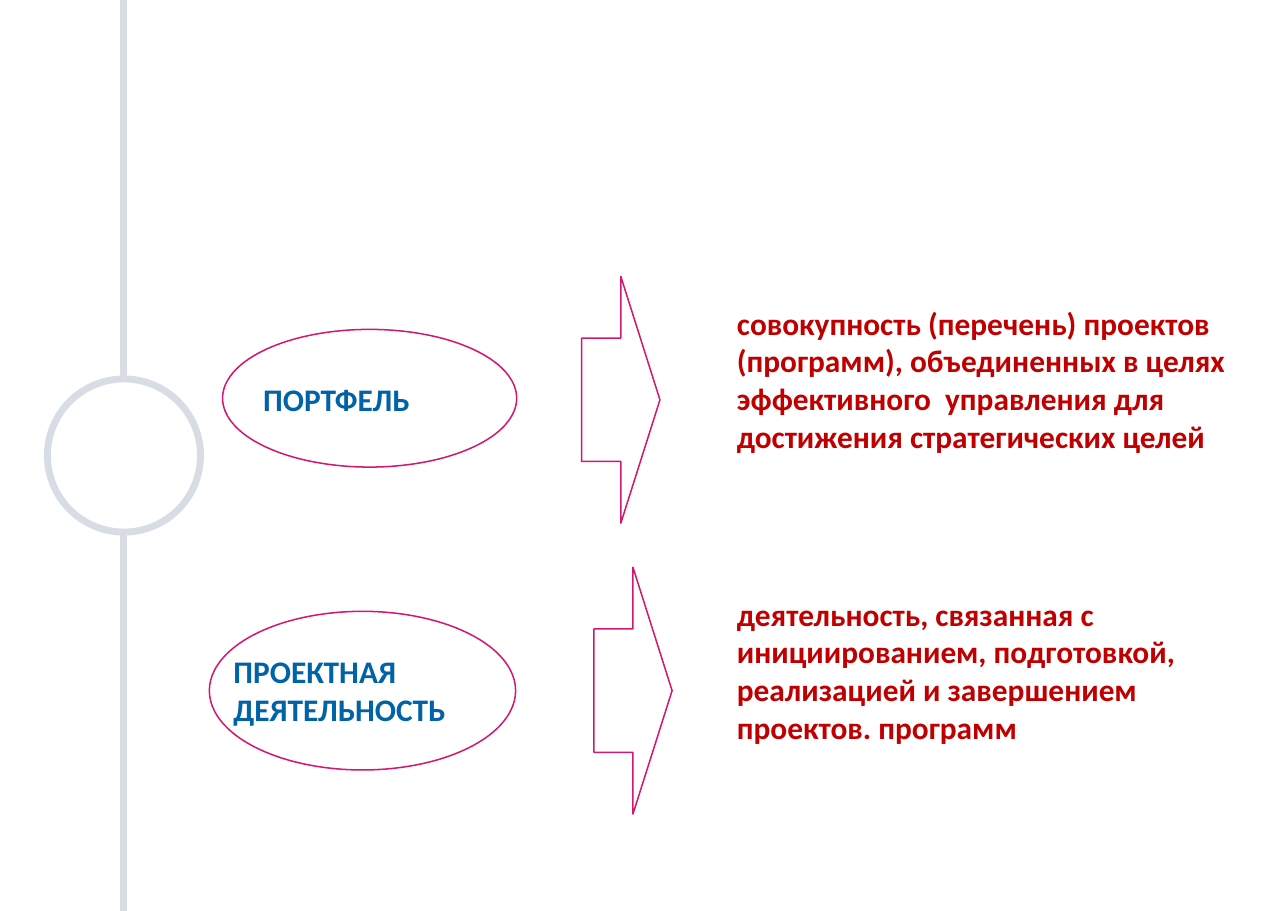
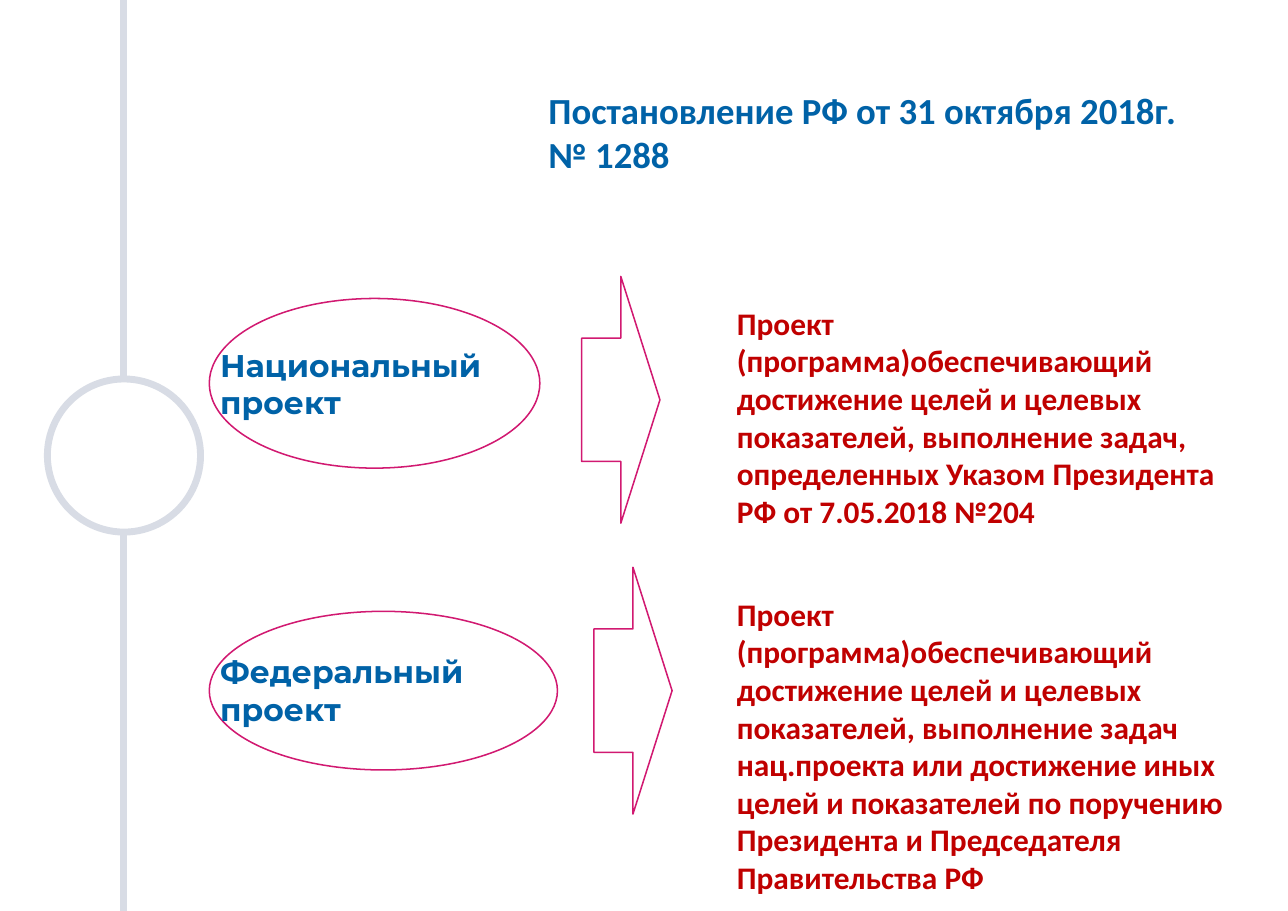
"""Build two slides that define project management terms."""
from dataclasses import dataclass

from lxml import etree
from pptx import Presentation
from pptx import util as u
from pptx.dml.color import RGBColor
from pptx.enum import shapes, text

PX = 9144
PAGE_WIDTH, PAGE_HEIGHT = 1169, 827
WHITE, GREY, PINK = "FFFFFF", "D8DCE5", "D11971"
BLUE, RED = "0062A7", "C00000"
RAIL_X, RING_SIZE = 112, 139
RAIL_WIDTH, OUTLINE_WIDTH = 4.5, 1
TERM_SIZE, HEADING_SIZE = 20.5, 24
BODY_FONT = "Calibri"
ARROWS = ((528, 251), (539, 515))
ARROW_WIDTH, ARROW_HEIGHT = 71, 224
DEFINITION_X, DEFINITION_WIDTH = 659, 486
DEFINITION_TOPS = (271, 535)


@dataclass(frozen=True)
class Area:
    left: int
    top: int
    width: int
    height: int

    def emu(self) -> tuple[int, ...]:
        return tuple(side * PX for side in (self.left, self.top, self.width, self.height))


@dataclass(frozen=True)
class Term:
    name: str
    oval: Area
    label: Area
    definition: str
    definition_height: int


@dataclass(frozen=True)
class Page:
    terms: tuple[Term, ...]
    font: str
    heading: str = ""


PAGES = (
    Page((
        Term("ПОРТФЕЛЬ", Area(202, 299, 267, 125), Area(229, 340, 189, 45),
             "совокупность (перечень) проектов (программ), объединенных в целях "
             "эффективного  управления для достижения стратегических целей", 218),
        Term("ПРОЕКТНАЯ\nДЕЯТЕЛЬНОСТЬ", Area(190, 555, 278, 144), Area(202, 587, 267, 79),
             "деятельность, связанная с инициированием, подготовкой, реализацией "
             "и завершением проектов. программ", 148),
    ), BODY_FONT),
    Page((
        Term("Национальный проект", Area(190, 271, 300, 154), Area(190, 309, 278, 79),
             "Проект (программа)обеспечивающий достижение целей и целевых показателей, "
             "выполнение задач, определенных Указом Президента РФ от 7.05.2018 №204", 183),
        Term("Федеральный проект", Area(190, 555, 316, 144), Area(190, 587, 267, 79),
             "Проект (программа)обеспечивающий достижение целей и целевых показателей, "
             "выполнение задач нац.проекта или достижение иных целей и показателей "
             "по поручению Президента и Председателя Правительства РФ", 252),
    ), "Montserrat", "Постановление РФ от 31 октября 2018г.\n№ 1288"),
)


def color(value: str) -> RGBColor:
    return RGBColor.from_string(value)


def add_outline(page, kind, area: Area, line_color: str, width: float) -> None:
    shape = page.shapes.add_shape(kind, *area.emu())
    shape.shadow.inherit = False
    shape.fill.solid()
    shape.fill.fore_color.rgb = color(WHITE)
    shape.line.color.rgb = color(line_color)
    shape.line.width = u.Pt(width)


def add_text(page, area: Area, wording: str, text_color: str,
             font: str = BODY_FONT, size: float = TERM_SIZE) -> None:
    box = page.shapes.add_textbox(*area.emu())
    frame = box.text_frame
    frame.word_wrap = True
    frame.auto_size = text.MSO_AUTO_SIZE.SHAPE_TO_FIT_TEXT
    frame.text = wording
    for para in frame.paragraphs:
        para.font.name = font
        para.font.size = u.Pt(size)
        para.font.bold = True
        para.font.color.rgb = color(text_color)


def add_rail(page) -> None:
    rail = page.shapes.add_connector(
        shapes.MSO_CONNECTOR.STRAIGHT, RAIL_X * PX, PAGE_HEIGHT * PX, RAIL_X * PX, 0)
    rail.line.color.rgb = color(GREY)
    rail.line.width = u.Pt(RAIL_WIDTH)
    properties = rail.line._get_or_add_ln().getparent()
    namespace = etree.QName(properties[0]).namespace
    etree.SubElement(properties, f"{{{namespace}}}effectLst")
    ring = Area(RAIL_X - RING_SIZE // 2, (PAGE_HEIGHT - RING_SIZE) // 2, RING_SIZE, RING_SIZE)
    add_outline(page, shapes.MSO_SHAPE.OVAL, ring, GREY, RAIL_WIDTH)


def add_page(deck, content: Page) -> None:
    page = deck.slides.add_slide(deck.slide_layouts[6])
    add_rail(page)
    for term, arrow, top in zip(content.terms, ARROWS, DEFINITION_TOPS):
        add_outline(page, shapes.MSO_SHAPE.OVAL, term.oval, PINK, OUTLINE_WIDTH)
        add_text(page, term.label, term.name, BLUE, content.font)
        add_outline(page, shapes.MSO_SHAPE.RIGHT_ARROW,
                    Area(*arrow, ARROW_WIDTH, ARROW_HEIGHT), PINK, OUTLINE_WIDTH)
        add_text(page, Area(DEFINITION_X, top, DEFINITION_WIDTH, term.definition_height),
                 term.definition, RED)
    if content.heading:
        add_text(page, Area(488, 75, 657, 91), content.heading, BLUE, size=HEADING_SIZE)


def main() -> None:
    deck = Presentation()
    deck.slide_width, deck.slide_height = PAGE_WIDTH * PX, PAGE_HEIGHT * PX
    for content in PAGES:
        add_page(deck, content)
    deck.save("out.pptx")


if __name__ == "__main__":
    main()
